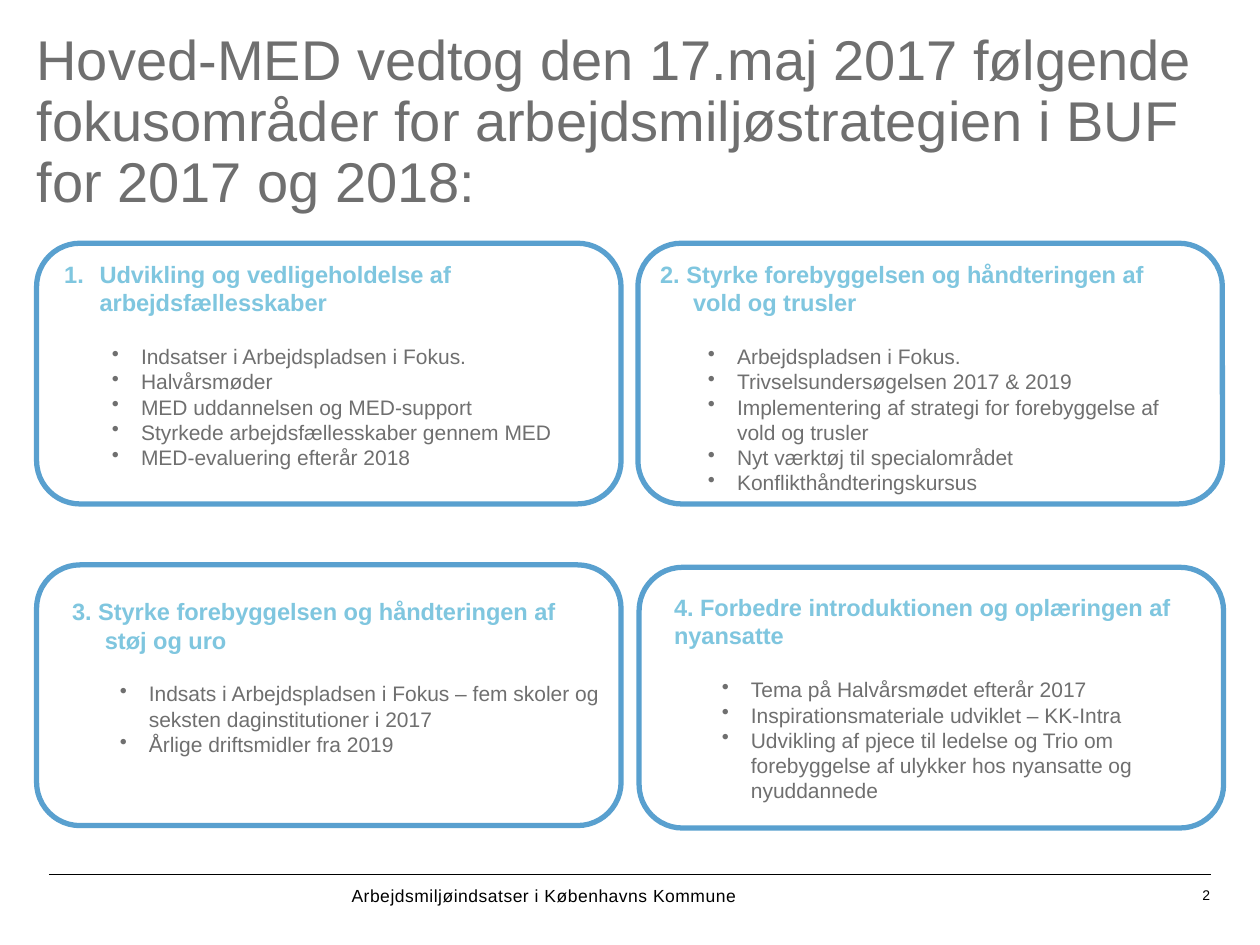
import pptx
import pptx.dml.color
import pptx.enum.shapes
import pptx.enum.text
import pptx.oxml.ns
import pptx.util
from lxml import etree

Pt = pptx.util.Pt
GREY = pptx.dml.color.RGBColor(0x6F, 0x6F, 0x6F)
BLUE = pptx.dml.color.RGBColor(0x59, 0xA0, 0xCF)
LIGHT_BLUE = pptx.dml.color.RGBColor(0x7F, 0xC6, 0xDF)
BLACK = pptx.dml.color.RGBColor(0, 0, 0)
PANEL_WIDTH, PANEL_HEIGHT = 334, 149
TEXT_WIDTH = 308


def add_text_frame(left, top, width, height):
    frame = slide.shapes.add_textbox(Pt(left), Pt(top), Pt(width), Pt(height)).text_frame
    frame.word_wrap = True
    frame.margin_left = frame.margin_right = frame.margin_top = frame.margin_bottom = 0
    return frame


def fill_paragraph(paragraph, text, size, color, bold=False, hanging=None, bullet=None):
    """hanging is (left margin, first-line indent); bullet is (tag, attributes)."""
    paragraph.text = text
    properties = paragraph._p.get_or_add_pPr()
    if hanging:
        margin, indent = hanging
        properties.set("marL", str(Pt(margin)))
        properties.set("indent", str(Pt(indent)))
    if bullet:
        tag, attributes = bullet
        etree.SubElement(properties, pptx.oxml.ns.qn(tag), attributes)
    font = paragraph.font
    font.name, font.size, font.bold = "Arial", Pt(size), bold
    font.color.rgb = color


presentation = pptx.Presentation()
presentation.slide_width, presentation.slide_height = Pt(720), Pt(540)
slide = presentation.slides.add_slide(presentation.slide_layouts[6])

# Footer: rule, text and page number
rule = slide.shapes.add_connector(
    pptx.enum.shapes.MSO_CONNECTOR.STRAIGHT, Pt(28), Pt(499.7), Pt(692), Pt(499.7))
rule.line.color.rgb = BLACK
rule.line.width = Pt(0.5)
etree.SubElement(rule._element.spPr, pptx.oxml.ns.qn("a:effectLst"))

footer = add_text_frame(200.9, 503.3, 452.9, 16.6)
footer.vertical_anchor = pptx.enum.text.MSO_ANCHOR.MIDDLE
fill_paragraph(footer.paragraphs[0], "Arbejdsmiljøindsatser i Københavns Kommune", 10, BLACK)
footer.paragraphs[0].runs[0]._r.get_or_add_rPr().set("spc", "30")

page_number = add_text_frame(653, 503.3, 38.5, 16)
page_number.vertical_anchor = pptx.enum.text.MSO_ANCHOR.MIDDLE
fill_paragraph(page_number.paragraphs[0], "2", 8, BLACK)
page_number.paragraphs[0].alignment = pptx.enum.text.PP_ALIGN.RIGHT

# Title
title = add_text_frame(20.9, 18, 678.2, 106.6)
fill_paragraph(
    title.paragraphs[0],
    "Hoved-MED vedtog den 17.maj 2017 følgende fokusområder for "
    "arbejdsmiljøstrategien i BUF for 2017 og 2018:", 32, GREY)
title.paragraphs[0].line_spacing = 0.91

# Focus areas: panel corner, text corner, heading, heading indents and number, actions
NUMBERED = ("a:buAutoNum", {"type": "arabicPeriod"})
DOT = ("a:buChar", {"char": "•"})
focus_areas = [
    ((20.9, 139), (36.7, 148.6),
     "Udvikling og vedligeholdelse af arbejdsfællesskaber", (20.2, -20.2), NUMBERED,
     ["Indsatser i Arbejdspladsen i Fokus.",
      "Halvårsmøder",
      "MED uddannelsen og MED-support",
      "Styrkede arbejdsfællesskaber gennem MED",
      "MED-evaluering efterår 2018"]),
    ((364.5, 139), (377.3, 148.6),
     "2. Styrke forebyggelsen og håndteringen af\vvold og trusler", (18.8, -18.8), None,
     ["Arbejdspladsen i Fokus.",
      "Trivselsundersøgelsen 2017 & 2019",
      "Implementering af strategi for forebyggelse af vold og trusler",
      "Nyt værktøj til specialområdet",
      "Konflikthåndteringskursus"]),
    ((20.9, 322.8), (41.2, 341.3),
     "3. Styrke forebyggelsen og håndteringen af\vstøj og uro", (18.8, -18.8), None,
     ["Indsats i Arbejdspladsen i Fokus – fem skoler og seksten daginstitutioner i 2017",
      "Årlige driftsmidler fra 2019"]),
    ((365.2, 324.2), (385.2, 338.9),
     "4. Forbedre introduktionen og oplæringen af nyansatte", None, None,
     ["Tema på Halvårsmødet efterår 2017",
      "Inspirationsmateriale udviklet – KK-Intra",
      "Udvikling af pjece til ledelse og Trio om forebyggelse af ulykker hos "
      "nyansatte og nyuddannede"]),
]

for (panel_left, panel_top), (left, top), heading, hanging, number, actions in focus_areas:
    panel = slide.shapes.add_shape(
        pptx.enum.shapes.MSO_SHAPE.ROUNDED_RECTANGLE,
        Pt(panel_left), Pt(panel_top), Pt(PANEL_WIDTH), Pt(PANEL_HEIGHT))
    panel.shadow.inherit = False
    panel.fill.background()
    panel.line.color.rgb = BLUE
    panel.line.width = Pt(3)

    area = add_text_frame(left, top, TEXT_WIDTH, 122)
    fill_paragraph(area.paragraphs[0], heading, 13.5, LIGHT_BLUE, True, hanging, number)
    area.paragraphs[0].space_after = Pt(15.5)
    for action in actions:
        item = area.add_paragraph()
        item.level = 1
        fill_paragraph(item, action, 12, GREY, hanging=(43.9, -16.6), bullet=DOT)

presentation.save("out.pptx")
